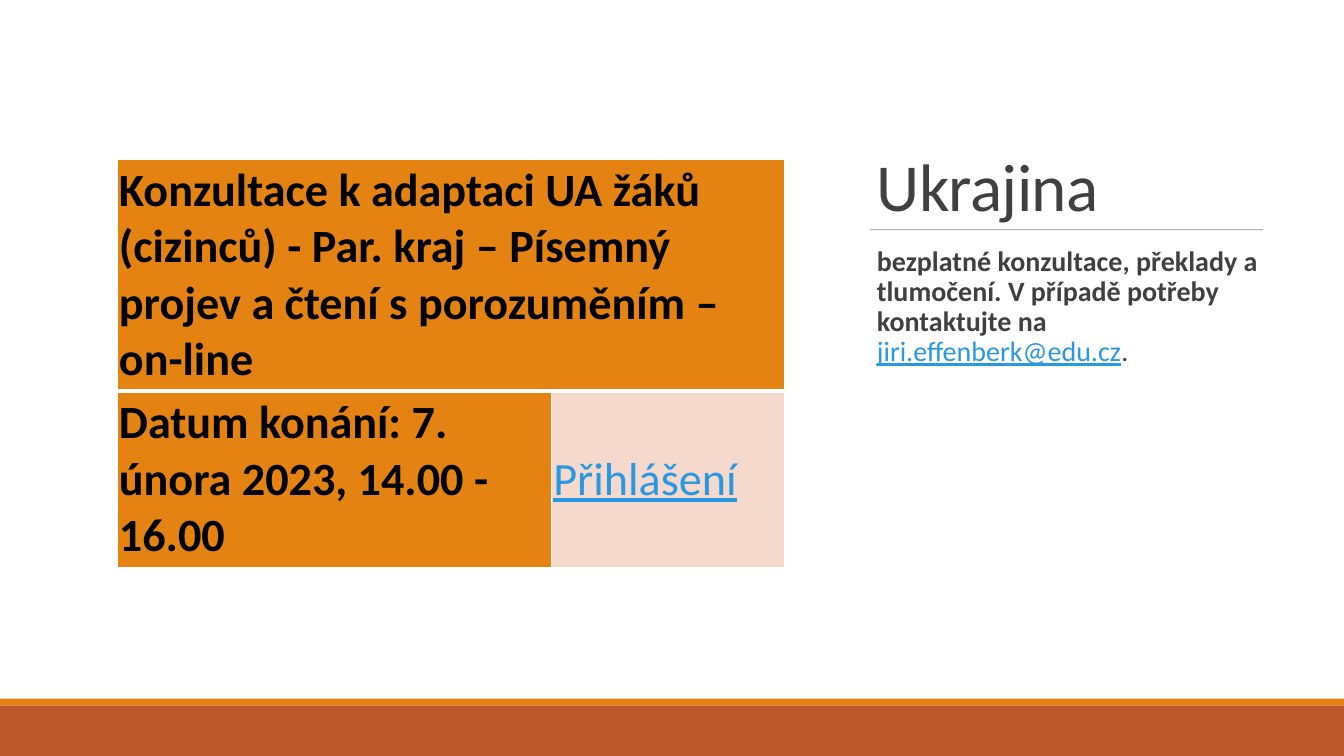
from lxml import etree
from pptx import Presentation
from pptx import util as u
from pptx.dml.color import RGBColor
from pptx.enum import shapes, text
from pptx.oxml.ns import qn

ORANGE, RUST, PINK = "E48312", "BD582C", "F5D9CC"
WHITE, BLACK, DARK, GREY, LINK = "FFFFFF", "000000", "404040", "808080", "2998E3"
SLIDE_W, SLIDE_H = 960, 540


def rgb(value):
    return RGBColor.from_string(value)


def add_run(p, content, size, color=BLACK, bold=False, underline=False, spacing=0):
    r = p.add_run()
    r.text = content
    f = r.font
    f.name, f.size, f.bold, f.underline = "Calibri", u.Pt(size), bold, underline
    f.color.rgb = rgb(color)
    if spacing:
        r._r.get_or_add_rPr().set("spc", str(int(spacing * 100)))


def add_text_frame(slide, x, y, w, h, inset_x, anchor):
    tf = slide.shapes.add_textbox(*map(u.Pt, (x, y, w, h))).text_frame
    tf.word_wrap, tf.vertical_anchor = True, anchor
    tf.margin_left = tf.margin_right = u.Pt(inset_x)
    tf.margin_top = tf.margin_bottom = u.Pt(3.6)
    return tf


def add_band(slide, x, y, w, h, color):
    sp = slide.shapes.add_shape(shapes.MSO_SHAPE.RECTANGLE, *map(u.Pt, (x, y, w, h)))
    sp.shadow.inherit = False
    sp.fill.solid()
    sp.fill.fore_color.rgb = rgb(color)
    sp.line.fill.background()


def add_footer(slide, x, y, w, h):
    stripe = 5
    add_band(slide, x, y, w, stripe, ORANGE)
    add_band(slide, x, y + stripe, w, h - stripe, RUST)


def add_rule(slide, x, y, w):
    line = slide.shapes.add_connector(
        shapes.MSO_CONNECTOR.STRAIGHT, *map(u.Pt, (x, y, x + w, y)))
    line.line.width = u.Pt(0.5)
    line.line.color.rgb = rgb(GREY)
    sp_pr = line._element.spPr
    alpha = etree.SubElement(next(sp_pr.iter(qn("a:srgbClr"))), qn("a:alpha"))
    alpha.set("val", "90000")
    etree.SubElement(sp_pr, qn("a:effectLst"))


def add_contact(slide, x, y, w, h):
    """Title, rule and contact details in the right column."""
    title_h = 114.5
    tf = add_text_frame(slide, x, y, w, title_h, 7.2, text.MSO_ANCHOR.BOTTOM)
    p = tf.paragraphs[0]
    p.line_spacing = 0.85
    add_run(p, "Ukrajina", 48, DARK, spacing=-0.5)

    add_rule(slide, x + 2.2, y + title_h, 280.8)

    body_top = title_h + 8.6
    tf = add_text_frame(slide, x, y + body_top, w, h - body_top, 0, text.MSO_ANCHOR.TOP)
    p = tf.paragraphs[0]
    p.line_spacing, p.space_before, p.space_after = 0.9, u.Pt(12), u.Pt(2)
    p._p.get_or_add_pPr().set("marL", str(u.Pt(7.2)))
    add_run(p, "bezplatné konzultace, překlady a tlumočení. "
               "V případě potřeby kontaktujte na ", 20, DARK, bold=True)
    add_run(p, "jiri.effenberk@edu.cz", 20, LINK, underline=True)
    add_run(p, ".", 20, DARK)


def set_borders(cell, **widths):
    """Draw white borders; keywords are the sides L, R, T and B in points."""
    tc_pr = cell._tc.get_or_add_tcPr()
    for i, (side, width) in enumerate(widths.items()):
        ln = etree.Element(qn(f"a:ln{side}"), w=str(u.Pt(width)))
        fill = etree.SubElement(ln, qn("a:solidFill"))
        etree.SubElement(fill, qn("a:srgbClr"), val=WHITE)
        tc_pr.insert(i, ln)


def fill_cell(cell, lines, background, **run_format):
    cell.fill.solid()
    cell.fill.fore_color.rgb = rgb(background)
    cell.vertical_anchor = text.MSO_ANCHOR.MIDDLE
    cell.margin_left = cell.margin_right = u.Pt(1.5)
    cell.margin_top = cell.margin_bottom = u.Pt(1.5)
    tf = cell.text_frame
    for i, line in enumerate(lines):
        p = tf.add_paragraph() if i else tf.paragraphs[0]
        add_run(p, line, 33, **run_format)


def add_event_table(slide, x, y, w, h):
    table = slide.shapes.add_table(2, 2, *map(u.Pt, (x, y, w, h))).table
    first_w, first_h = 310.3, 165.6
    for col, width in zip(table.columns, (first_w, w - first_w)):
        col.width = u.Pt(width)
    for row, height in zip(table.rows, (first_h, h - first_h)):
        row.height = u.Pt(height)
    for i in range(2):
        for j in range(2):
            set_borders(table.cell(i, j), L=1, R=1, T=1 if i == 0 else 3,
                        B=3 if i == 0 else 1)
    topic = table.cell(0, 0)
    topic.merge(table.cell(0, 1))
    fill_cell(topic, ["Konzultace k adaptaci UA žáků (cizinců) - Par. kraj – "
                      "Písemný projev a čtení s porozuměním –", "on-line"],
              ORANGE, bold=True)
    fill_cell(table.cell(1, 0), ["Datum konání: 7. února 2023, 14.00 - 16.00"],
              ORANGE, bold=True)
    fill_cell(table.cell(1, 1), ["Přihlášení"], PINK, color=LINK, underline=True)


def main():
    prs = Presentation()
    prs.slide_width, prs.slide_height = u.Pt(SLIDE_W), u.Pt(SLIDE_H)
    slide = prs.slides.add_slide(prs.slide_layouts[6])
    footer_h = 41
    add_footer(slide, 0, SLIDE_H - footer_h, SLIDE_W, footer_h)
    add_contact(slide, 619.2, 49.7, 290.9, 411.8)
    add_event_table(slide, 83.5, 113.8, 477.3, 291.6)
    prs.save("out.pptx")


if __name__ == "__main__":
    main()
